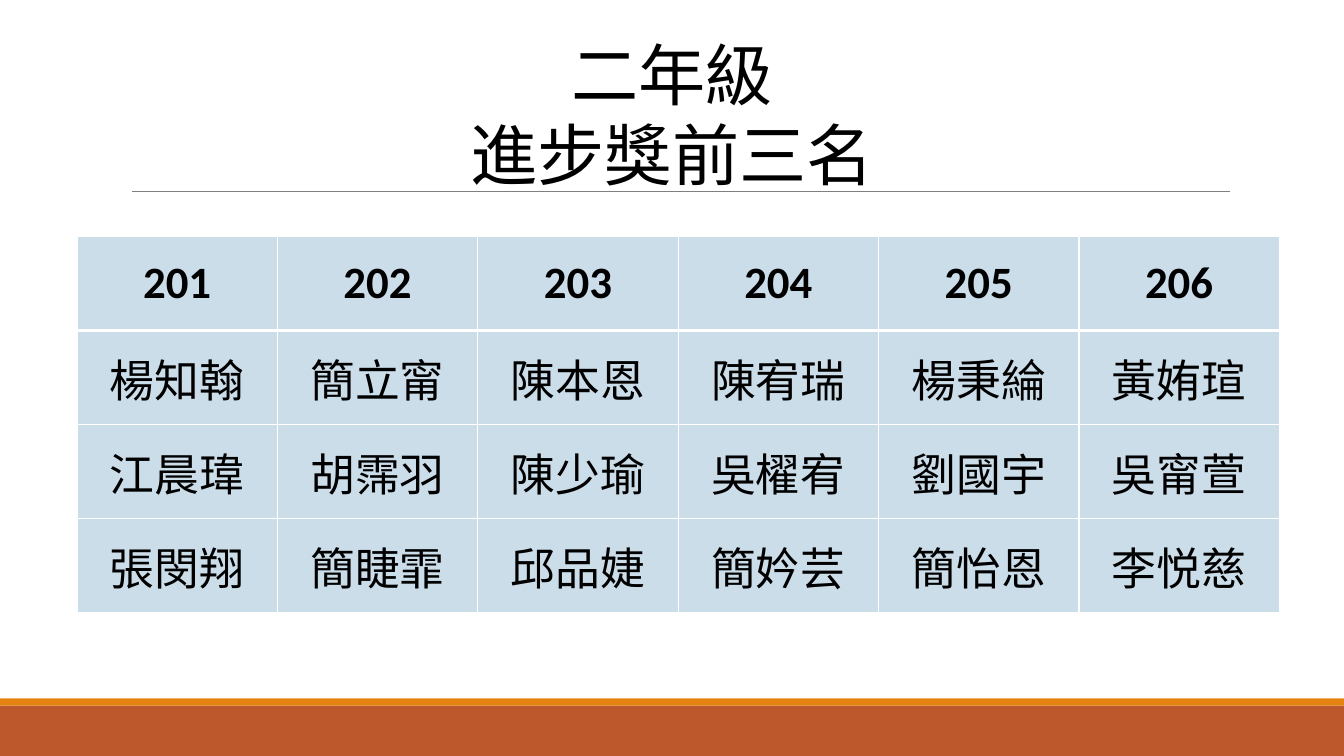
from lxml.etree import SubElement
from pptx import Presentation
from pptx.dml.color import RGBColor
from pptx.enum.shapes import MSO_CONNECTOR as Connector, MSO_SHAPE as Shape
from pptx.enum.text import MSO_ANCHOR as Anchor, MSO_AUTO_SIZE as AutoSize, PP_ALIGN as Align
from pptx.oxml.ns import qn
from pptx.util import Cm, Pt

CELL_BLUE, WHITE, BLACK = "CCDDEA", "FFFFFF", "000000"
CJK_FONT = "Noto Sans CJK SC"
WINNERS = [
    ["201", "202", "203", "204", "205", "206"],
    ["楊知翰", "簡立甯", "陳本恩", "陳宥瑞", "楊秉綸", "黃姷瑄"],
    ["江晨瑋", "胡霈羽", "陳少瑜", "吳櫂宥", "劉國宇", "吳甯萱"],
    ["張閔翔", "簡睫霏", "邱品婕", "簡妗芸", "簡怡恩", "李悦慈"],
]


def paint(fill, color):
    fill.solid()
    fill.fore_color.rgb = RGBColor.from_string(color)


def write(frame, text, font=CJK_FONT, size=32, bold=False, line_spacing=None):
    """Fill the frame with one centred paragraph per line of text."""
    frame.text = text
    for para in frame.paragraphs:
        para.alignment = Align.CENTER
        para.line_spacing = line_spacing
        for span in para.runs:
            span.font.name = font
            span.font.size = Pt(size)
            span.font.bold = bold
            paint(span.font.fill, BLACK)
            SubElement(span.font._element, qn("a:ea"), typeface=font)


deck = Presentation()
deck.slide_width, deck.slide_height = Cm(33.87), Cm(19.05)
page = deck.slides.add_slide(deck.slide_layouts[5])

# Footer bands and the rule under the title
for top, height, color in [(17.78, 1.27, "BD582C"), (17.6, 0.18, "E48312")]:
    band = page.shapes.add_shape(Shape.RECTANGLE, 0, Cm(top), deck.slide_width, Cm(height))
    band.shadow.inherit = False
    band.line.fill.background()
    paint(band.fill, color)

rule = page.shapes.add_connector(Connector.STRAIGHT, Cm(3.33), Cm(4.82), Cm(31), Cm(4.82))
rule.line.width = Pt(0.5)
paint(rule.line.fill, "808080")
SubElement(rule._element.spPr, qn("a:effectLst"))

# Table of the three winners in each class
table = page.shapes.add_table(len(WINNERS), len(WINNERS[0]),
                              Cm(1.94), Cm(5.96), Cm(30.3), Cm(9.48)).table
table.first_row = table.horz_banding = False
for row_index, names in enumerate(WINNERS):
    header = row_index == 0
    for column_index, name in enumerate(names):
        cell = table.cell(row_index, column_index)
        cell.vertical_anchor = Anchor.MIDDLE
        if header:
            write(cell.text_frame, name, font="Calibri", bold=True)
        else:
            cell.margin_left = cell.margin_right = Cm(0.03)
            cell.margin_top = cell.margin_bottom = Cm(0.03)
            write(cell.text_frame, name)
        borders = {"lnL": 1, "lnR": 1, "lnT": 3 if row_index == 1 else 1, "lnB": 3 if header else 1}
        for side, width in borders.items():
            border = SubElement(cell._tc.get_or_add_tcPr(), qn(f"a:{side}"), w=str(Pt(width)))
            SubElement(SubElement(border, qn("a:solidFill")), qn("a:srgbClr"), val=WHITE)
        paint(cell.fill, CELL_BLUE)

# Title
title = page.shapes.title
title.left, title.top, title.width, title.height = Cm(11.55), Cm(0.53), Cm(10.78), Cm(4.37)
frame = title.text_frame
frame.word_wrap = False
frame.auto_size = AutoSize.NONE
frame.vertical_anchor = Anchor.TOP
frame.margin_top = Cm(0.3)
write(frame, "二年級\n進步獎前三名", font="Noto Sans CJK JP", size=48, line_spacing=Pt(57.6))

deck.save("out.pptx")
